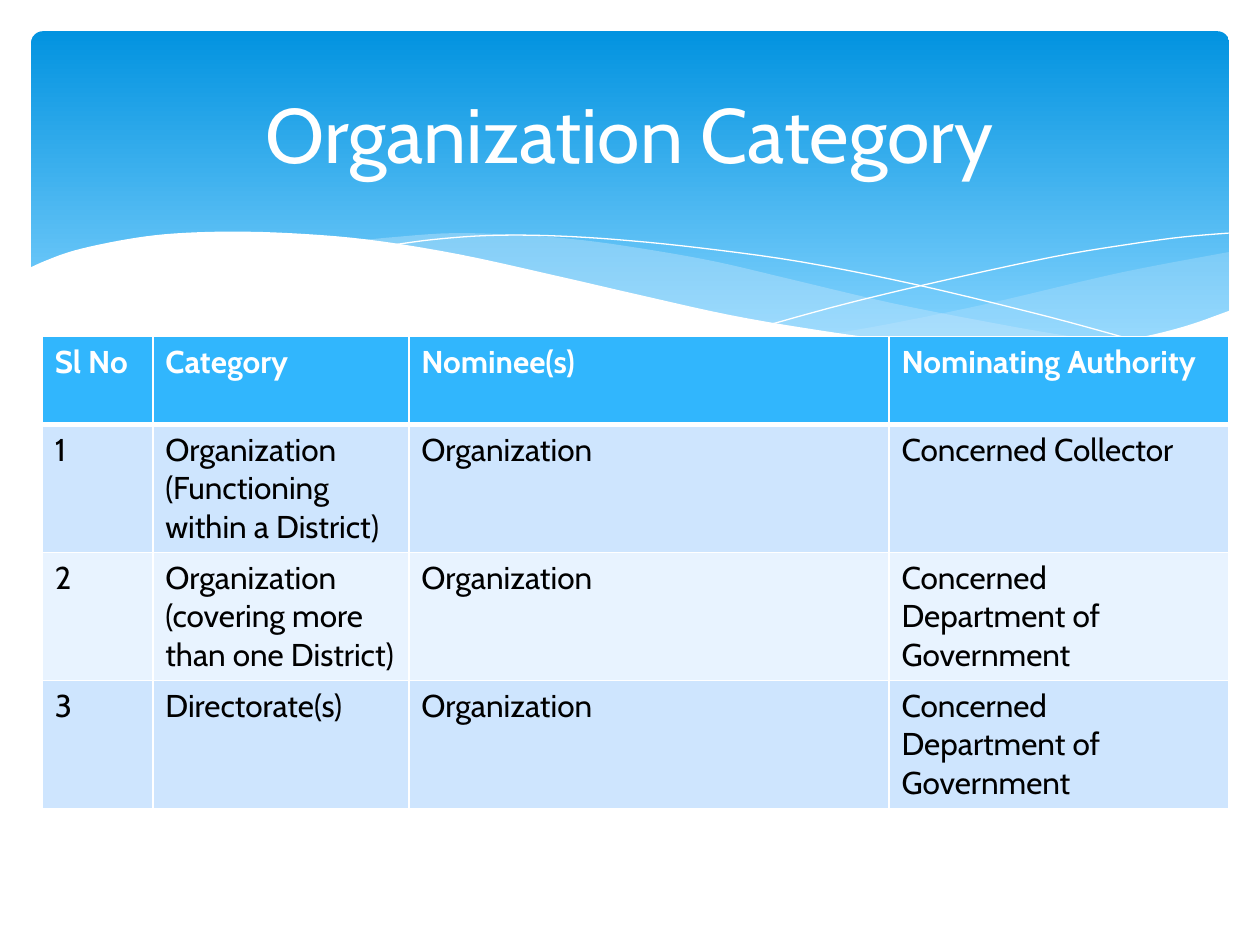
from dataclasses import dataclass

from lxml.etree import SubElement
from pptx import Presentation
from pptx.dml.color import RGBColor
from pptx.enum.shapes import MSO_SHAPE
from pptx.enum.text import MSO_ANCHOR, PP_ALIGN
from pptx.oxml import parse_xml
from pptx.oxml.ns import nsdecls, qn
from pptx.util import Cm, Pt


@dataclass(frozen=True)
class Theme:
    font: str = "Cabin"
    title_size: int = 44
    table_size: int = 18
    white: str = "FFFFFF"
    black: str = "000000"
    banner_top: str = "0293E0"
    banner_bottom: str = "83D3FE"
    band: str = "C6E7FC"
    header: str = "31B6FD"
    odd_row: str = "CEE5FE"
    even_row: str = "E8F3FF"


THEME = Theme()

# Knots of the banner's curves, in centimetres
RIGHT_BAND = [
    [(24.78, 5.08), (23.01, 5.41), (21.87, 5.66), (19.79, 6.15), (17.93, 6.53), (16.79, 6.73)],
    [(16.79, 6.73), (17.91, 6.88), (19.23, 7.01), (20.4, 7.06), (21.69, 7.01), (22.78, 6.86),
     (23.75, 6.65), (24.78, 6.27)],
]
MIDDLE_BAND = [
    [(22.68, 6.93), (21.26, 6.73), (19.69, 6.45), (17.93, 6.1), (15.98, 5.64), (14.45, 5.28),
     (13.06, 5.03), (11.81, 4.85), (10.67, 4.75), (9.17, 4.7), (7.95, 4.78), (7.26, 4.85)],
    [(7.26, 4.85), (8.69, 5.05), (10.26, 5.36), (11.4, 5.64), (13.46, 6.1), (15.27, 6.48),
     (16.89, 6.76), (18.34, 6.96), (19.63, 7.04), (20.78, 7.06), (21.77, 7.04), (22.68, 6.93)],
]
FALLING_LINE = [(7.85, 4.95), (8.74, 4.83), (9.83, 4.75), (11, 4.75), (12.42, 4.83), (14.12, 5),
                (16.15, 5.28), (18.47, 5.74), (21.11, 6.38), (23.04, 6.91)]
RISING_LINE = [(15.57, 6.53), (17.07, 6.12), (19, 5.66), (21.23, 5.18), (22.73, 4.93),
               (23.83, 4.78), (24.77, 4.7)]
WHITE_WAVE = [
    [(24.82, 6.25), (23.88, 6.58), (22.83, 6.83), (21.59, 6.99), (20.55, 7.04), (19.33, 6.99),
     (17.98, 6.86), (16.46, 6.65), (14.71, 6.35), (12.78, 5.92), (11.35, 5.59), (9.27, 5.13),
     (7.42, 4.83), (5.84, 4.7), (4.5, 4.67), (3.35, 4.72), (2.41, 4.85), (1.5, 5.05),
     (0.91, 5.26), (0.58, 5.41)],
    [(0.58, 8.36), (24.82, 8.36)],
]

COLUMN_WIDTHS = [2.23, 5.16, 9.68, 6.84]
HEADER_HEIGHT, ROW_HEIGHT = 1.78, 2.58
CATEGORIES = [
    ["Sl No", "Category", "Nominee(s)", "Nominating Authority"],
    ["1", "Organization (Functioning within a District)", "Organization", "Concerned Collector"],
    ["2", "Organization (covering more than one District)", "Organization",
     "Concerned Department of Government"],
    ["3", "Directorate(s)", "Organization", "Concerned Department of Government"],
]


def color(value):
    return RGBColor.from_string(value)


def smooth(knots, steps=5):
    """Points of a Catmull-Rom curve through the knots."""
    padded = [knots[0], *knots, knots[-1]]
    points = [knots[0]]
    for a, b, c, d in zip(padded, padded[1:], padded[2:], padded[3:]):
        for step in range(1, steps + 1):
            t = step / steps
            points.append(tuple(
                (2 * q + (r - p) * t + (2 * p - 5 * q + 4 * r - s) * t ** 2
                 + (3 * q - p - 3 * r + s) * t ** 3) / 2
                for p, q, r, s in zip(a, b, c, d)))
    return points


def add_outline(slide, curves, closed):
    points = [(Cm(x), Cm(y)) for curve in curves for x, y in smooth(curve)]
    builder = slide.shapes.build_freeform(*points[0], scale=1.0)
    builder.add_line_segments(points[1:], close=closed)
    outline = builder.convert_to_shape()
    outline.shadow.inherit = False
    return outline


def add_area(slide, curves, fill, opacity=100):
    area = add_outline(slide, curves, closed=True)
    area.fill.solid()
    area.fill.fore_color.rgb = color(fill)
    area.line.fill.background()
    if opacity < 100:
        tint = area._element.spPr.find(qn("a:solidFill"))[0]
        SubElement(tint, qn("a:alpha")).set("val", str(opacity * 1000))


def add_hairline(slide, knots):
    hairline = add_outline(slide, [knots], closed=False)
    hairline.fill.background()
    hairline.line.color.rgb = color(THEME.white)
    hairline.line.width = Pt(0)


def add_banner(slide):
    banner = slide.shapes.add_shape(
        MSO_SHAPE.ROUNDED_RECTANGLE, Cm(0.63), Cm(0.63), Cm(24.15), Cm(6.86))
    banner.adjustments[0] = 0.034
    banner.shadow.inherit = False
    banner.line.fill.background()
    banner.fill.gradient()
    banner.fill.gradient_angle = 270
    stops = zip(banner.fill.gradient_stops, (0, 0.9), (THEME.banner_top, THEME.banner_bottom))
    for stop, position, tone in stops:
        stop.position = position
        stop.color.rgb = color(tone)


def add_run(paragraph, text, size, tone, bold=False):
    run = paragraph.add_run()
    run.text = text
    run.font.name = THEME.font
    run.font.size = Pt(size)
    run.font.bold = bold
    run.font.color.rgb = color(tone)


def add_title(slide, text):
    title = slide.shapes.add_textbox(Cm(1.27), Cm(0.94), Cm(22.86), Cm(3.48))
    title.text_frame.word_wrap = True
    title.text_frame.vertical_anchor = MSO_ANCHOR.MIDDLE
    paragraph = title.text_frame.paragraphs[0]
    paragraph.alignment = PP_ALIGN.CENTER
    add_run(paragraph, text, THEME.title_size, THEME.white)


def set_borders(cell, top, bottom):
    properties = cell._tc.get_or_add_tcPr()
    for index, (side, width) in enumerate(zip("LRTB", (1, 1, top, bottom))):
        properties.insert(index, parse_xml(
            f'<a:ln{side} {nsdecls("a")} w="{Pt(width)}"><a:solidFill>'
            f'<a:srgbClr val="{THEME.white}"/></a:solidFill></a:ln{side}>'))


def add_category_table(slide):
    heights = [HEADER_HEIGHT] + [ROW_HEIGHT] * (len(CATEGORIES) - 1)
    table = slide.shapes.add_table(
        len(CATEGORIES), len(COLUMN_WIDTHS), Cm(0.85), Cm(6.78),
        Cm(sum(COLUMN_WIDTHS)), Cm(sum(heights))).table
    for column, width in zip(table.columns, COLUMN_WIDTHS):
        column.width = Cm(width)
    for number, (row, height, texts) in enumerate(zip(table.rows, heights, CATEGORIES)):
        row.height = Cm(height)
        is_header = number == 0
        row_fill = THEME.header if is_header else (THEME.even_row, THEME.odd_row)[number % 2]
        for cell, text in zip(row.cells, texts):
            cell.fill.solid()
            cell.fill.fore_color.rgb = color(row_fill)
            set_borders(cell, top=3 if number == 1 else 1, bottom=3 if is_header else 1)
            add_run(cell.text_frame.paragraphs[0], text, THEME.table_size,
                    THEME.white if is_header else THEME.black, bold=is_header)


def main():
    presentation = Presentation()
    presentation.slide_width, presentation.slide_height = Cm(25.4), Cm(19.05)
    slide = presentation.slides.add_slide(presentation.slide_layouts[6])

    # Banner with its waves
    add_banner(slide)
    add_area(slide, RIGHT_BAND, THEME.band, opacity=29)
    add_area(slide, MIDDLE_BAND, THEME.band, opacity=40)
    add_hairline(slide, FALLING_LINE)
    add_hairline(slide, RISING_LINE)
    add_area(slide, WHITE_WAVE, THEME.white)

    # Content
    add_category_table(slide)
    add_title(slide, "Organization Category")

    presentation.save("out.pptx")


if __name__ == "__main__":
    main()
